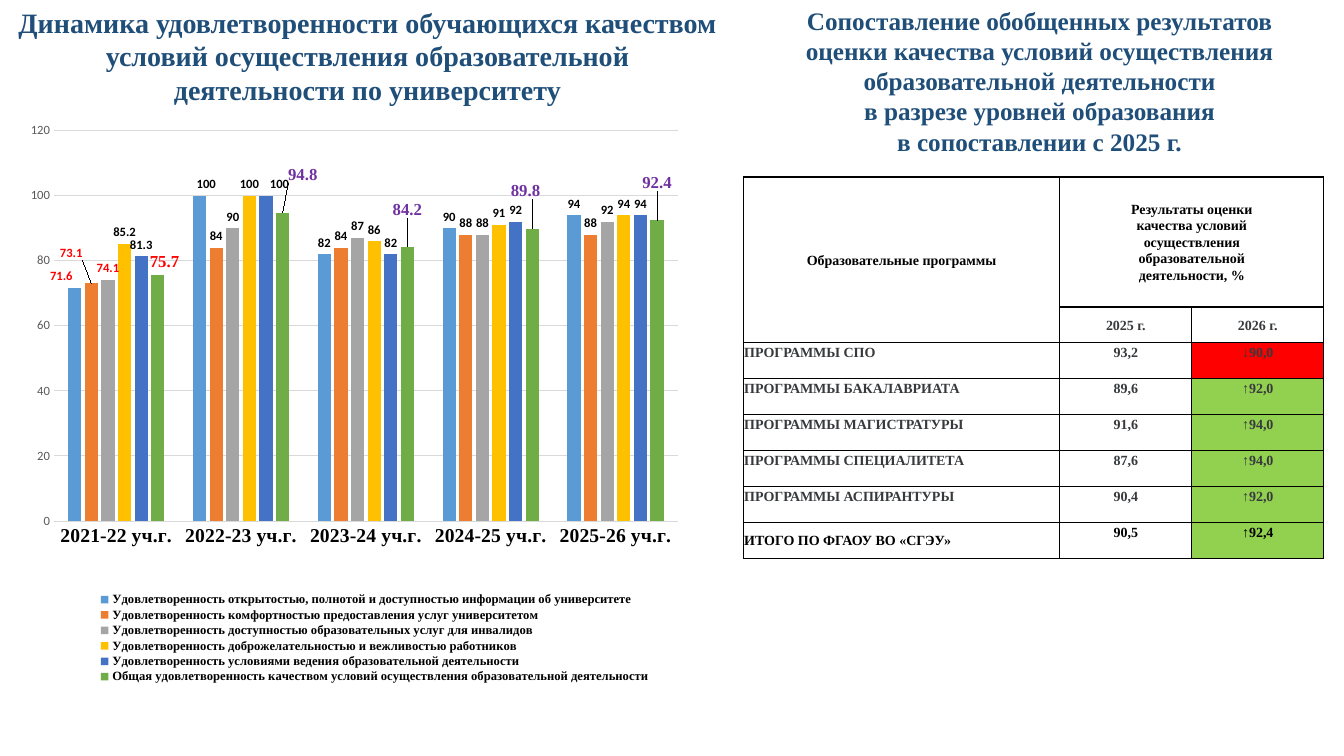
from lxml.etree import SubElement
from pptx import Presentation
from pptx.chart.data import CategoryChartData
from pptx.dml.color import RGBColor
from pptx.enum.chart import XL_CHART_TYPE, XL_LABEL_POSITION, XL_LEGEND_POSITION, XL_TICK_MARK
from pptx.enum.text import MSO_ANCHOR, MSO_AUTO_SIZE, PP_ALIGN
from pptx.oxml import parse_xml
from pptx.oxml.ns import nsdecls, qn
from pptx.util import Inches, Pt

NAVY = RGBColor(0x1F, 0x4E, 0x79)
BLACK = RGBColor(0, 0, 0)
WHITE = RGBColor(255, 255, 255)
CHARCOAL = RGBColor(0x37, 0x3A, 0x3C)
GRAY = RGBColor(0x59, 0x59, 0x59)
GRID = RGBColor(0xD9, 0xD9, 0xD9)
RED = RGBColor(255, 0, 0)
LIME = RGBColor(0x92, 0xD0, 0x50)
PURPLE = RGBColor(0x70, 0x30, 0xA0)
BLUE = RGBColor(0x5B, 0x9B, 0xD5)
ORANGE = RGBColor(0xED, 0x7D, 0x31)
SILVER = RGBColor(0xA5, 0xA5, 0xA5)
GOLD = RGBColor(0xFF, 0xC0, 0x00)
INDIGO = RGBColor(0x44, 0x72, 0xC4)
GREEN = RGBColor(0x70, 0xAD, 0x47)

SERIF = "Times New Roman"
SANS = "Calibri"

YEARS = [f"20{year}-{year + 1} уч.г." for year in range(21, 26)]
SERIES = [
    ("Удовлетворенность открытостью, полнотой и доступностью информации об университете",
     BLUE, (71.6, 100, 82, 90, 94), {0: (-0.02, 0, RED), 1: (0.01, 0, BLACK)}),
    ("Удовлетворенность комфортностью предоставления услуг университетом",
     ORANGE, (73.1, 84, 84, 88, 88), {0: (-0.03, -0.03, RED)}),
    ("Удовлетворенность доступностью образовательных услуг для инвалидов",
     SILVER, (74.1, 90, 87, 88, 92), {0: (0, 0, RED)}),
    ("Удовлетворенность доброжелательностью и вежливостью работников",
     GOLD, (85.2, 100, 86, 91, 94), {}),
    ("Удовлетворенность условиями ведения образовательной деятельности",
     INDIGO, (81.3, 100, 82, 92, 94), {1: (0.02, 0, BLACK)}),
    ("Общая удовлетворенность качеством условий осуществления образовательной деятельности",
     GREEN, (75.7, 94.8, 84.2, 89.8, 92.4),
     {0: (0.01, 0, RED), 1: (0.03, -0.04, PURPLE), 2: (0, -0.04, PURPLE),
      3: (-0.01, -0.04, PURPLE), 4: (0, -0.04, PURPLE)}),
]

RESULT_HEADER = ["Результаты оценки", "качества условий", "осуществления",
                 "образовательной", "деятельности, %"]
PROGRAMS = [
    ("ПРОГРАММЫ СПО", "93,2", "↓90,0"),
    ("ПРОГРАММЫ БАКАЛАВРИАТА", "89,6", "↑92,0"),
    ("ПРОГРАММЫ МАГИСТРАТУРЫ", "91,6", "↑94,0"),
    ("ПРОГРАММЫ СПЕЦИАЛИТЕТА", "87,6", "↑94,0"),
    ("ПРОГРАММЫ АСПИРАНТУРЫ", "90,4", "↑92,0"),
]
TOTAL = ("ИТОГО ПО ФГАОУ ВО «СГЭУ»", "90,5", "↑92,4")


def set_font(font, size, color, name=SERIF, bold=True):
    """Apply one complete font style."""
    font.name, font.size, font.bold = name, Pt(size), bold
    font.color.rgb = color


def add_layout(previous, **settings):
    """Insert a manual chart layout right after the given element."""
    layout = parse_xml(f"<c:layout {nsdecls('c')}><c:manualLayout/></c:layout>")
    for tag, value in settings.items():
        SubElement(layout[0], qn(f"c:{tag}")).set("val", str(value))
    previous.addnext(layout)


class SurveySlide:
    """Slide with shared style; places are percentages of the slide size."""

    def __init__(self, presentation):
        """Add a title-only slide."""
        self.width = presentation.slide_width
        self.height = presentation.slide_height
        self.slide = presentation.slides.add_slide(presentation.slide_layouts[5])

    def across(self, share):
        """Convert a percentage of the slide width to a length."""
        return round(self.width * share / 100)

    def down(self, share):
        """Convert a percentage of the slide height to a length."""
        return round(self.height * share / 100)

    def box(self, left, top, width, height):
        """Convert percentages to a position and size."""
        return self.across(left), self.down(top), self.across(width), self.down(height)

    def heading(self, shape, lines, size):
        """Fill a shape with a centred heading."""
        frame = shape.text_frame
        frame.word_wrap = True
        frame.auto_size = MSO_AUTO_SIZE.SHAPE_TO_FIT_TEXT
        frame.vertical_anchor = MSO_ANCHOR.TOP
        frame.text = "\n".join(lines)
        for paragraph in frame.paragraphs:
            paragraph.alignment = PP_ALIGN.CENTER
            set_font(paragraph.font, size, NAVY)

    def title(self, place, lines, size):
        """Move and fill the title placeholder."""
        shape = self.slide.shapes.title
        shape.left, shape.top, shape.width, shape.height = self.box(*place)
        self.heading(shape, lines, size)

    def text(self, place, lines, size):
        """Add a heading in a text box."""
        self.heading(self.slide.shapes.add_textbox(*self.box(*place)), lines, size)

    def cell(self, cell, lines, color=CHARCOAL, fill=WHITE, align=PP_ALIGN.CENTER,
             anchor=MSO_ANCHOR.TOP):
        """Write and format one table cell."""
        cell.text = "\n".join(lines)
        cell.vertical_anchor = anchor
        cell.margin_left = cell.margin_right = Inches(0.01)
        cell.margin_top = cell.margin_bottom = Inches(0.01)
        for paragraph in cell.text_frame.paragraphs:
            paragraph.alignment = align
            paragraph.line_spacing = 1.07
            set_font(paragraph.font, 10, color)
        cell.fill.solid()
        cell.fill.fore_color.rgb = fill

    def border(self, cell):
        """Draw a black line on each side of a cell."""
        properties = cell._tc.get_or_add_tcPr()
        for index, side in enumerate("LRTB"):
            properties.insert(index, parse_xml(
                f'<a:ln{side} {nsdecls("a")} w="12700"><a:solidFill>'
                f'<a:srgbClr val="{BLACK}"/></a:solidFill></a:ln{side}>'))

    def table(self, place, columns, rows):
        """Add the table of results by education level."""
        table = self.slide.shapes.add_table(len(rows), len(columns), *self.box(*place)).table
        table.first_row = table.horz_banding = False
        for column, share in zip(table.columns, columns):
            column.width = self.across(share)
        for row, share in zip(table.rows, rows):
            row.height = self.down(share)
        table.cell(0, 0).merge(table.cell(1, 0))
        table.cell(0, 1).merge(table.cell(0, 2))
        middle = MSO_ANCHOR.MIDDLE
        self.cell(table.cell(0, 0), ["Образовательные программы"], BLACK, anchor=middle)
        self.cell(table.cell(0, 1), RESULT_HEADER, BLACK, anchor=middle)
        for column, year in enumerate(("2025 г.", "2026 г."), 1):
            self.cell(table.cell(1, column), [year], anchor=middle)
        for row, (name, before, after) in enumerate([*PROGRAMS, TOTAL], 2):
            total = row == len(rows) - 1
            color = BLACK if total else CHARCOAL
            self.cell(table.cell(row, 0), [name], color,
                      align=PP_ALIGN.JUSTIFY if total else PP_ALIGN.LEFT,
                      anchor=middle if total else MSO_ANCHOR.TOP)
            self.cell(table.cell(row, 1), [before], color)
            self.cell(table.cell(row, 2), [after], color, RED if after[0] == "↓" else LIME)
        for cell in table.iter_cells():
            self.border(cell)

    def labels(self, series, size, color, name, moved):
        """Show values above the columns and shift selected labels."""
        labels = series.data_labels
        labels.show_value = True
        labels.position = XL_LABEL_POSITION.OUTSIDE_END
        set_font(labels.font, size, color, name)
        for index, (right, lower, point_color) in moved.items():
            label = series.points[index].data_label
            set_font(label.font, size, point_color, name)
            label.position = XL_LABEL_POSITION.OUTSIDE_END
            number = series._element.xpath(f'c:dLbls/c:dLbl/c:idx[@val="{index}"]')[0]
            add_layout(number, x=right, y=lower)

    def chart(self, place):
        """Add the column chart of satisfaction by year."""
        data = CategoryChartData()
        data.categories = YEARS
        for name, _, values, _ in SERIES:
            data.add_series(name, values)
        chart = self.slide.shapes.add_chart(
            XL_CHART_TYPE.COLUMN_CLUSTERED, *self.box(*place), data).chart
        chart.has_title = False
        set_font(chart.font, 10, BLACK, SANS, False)
        plot = chart.plots[0]
        plot.gap_width, plot.overlap, plot.vary_by_categories = 219, -27, False
        for series, (_, color, _, moved) in zip(plot.series, SERIES):
            series.format.fill.solid()
            series.format.fill.fore_color.rgb = color
            style = (12, PURPLE, SERIF) if color == GREEN else (9, BLACK, SANS)
            self.labels(series, *style, moved)
        years, values = chart.category_axis, chart.value_axis
        for axis in (years, values):
            axis.major_tick_mark = axis.minor_tick_mark = XL_TICK_MARK.NONE
        set_font(years.tick_labels.font, 14, BLACK)
        set_font(values.tick_labels.font, 9, GRAY, SANS, False)
        values.minimum_scale, values.maximum_scale, values.major_unit = 0, 120, 20
        values.format.line.fill.background()
        for line in (years.format.line, values.major_gridlines.format.line):
            line.color.rgb, line.width = GRID, Pt(0.75)
        chart.has_legend = True
        legend = chart.legend
        legend.position = XL_LEGEND_POSITION.BOTTOM
        legend.include_in_layout = False
        set_font(legend.font, 9, BLACK)
        add_layout(legend._element.find(qn("c:legendPos")), xMode="edge", yMode="edge",
                   x=0.1, y=0.77, w=0.85, h=0.15)
        area = plot._element.getparent()
        for layout in area.findall(qn("c:layout")):
            area.remove(layout)
        add_layout(plot._element, layoutTarget="inner", xMode="edge", yMode="edge",
                   x=0.05, y=0.03, w=0.925, h=0.627)
        area.insert(0, area.find(qn("c:layout")))


def main():
    """Build and save the presentation."""
    presentation = Presentation()
    presentation.slide_width, presentation.slide_height = Inches(13.33), Inches(7.5)
    survey = SurveySlide(presentation)
    survey.title((0.6, 0, 53.5, 14.8), [
        "Динамика удовлетворенности обучающихся качеством условий осуществления "
        "образовательной деятельности по университету"], 20)
    survey.text((55.3, 0, 44.1, 21.6), [
        "Сопоставление обобщенных результатов",
        "оценки качества условий осуществления образовательной деятельности",
        "в разрезе уровней образования",
        "в сопоставлении с 2025 г."], 18)
    survey.table((55.3, 23.4, 43.2, 50.5), (23.56, 9.82, 9.82), (17.2, *[4.76] * 7))
    survey.chart((1.5, 14.8, 50.2, 82.4))
    presentation.save("out.pptx")


if __name__ == "__main__":
    main()
